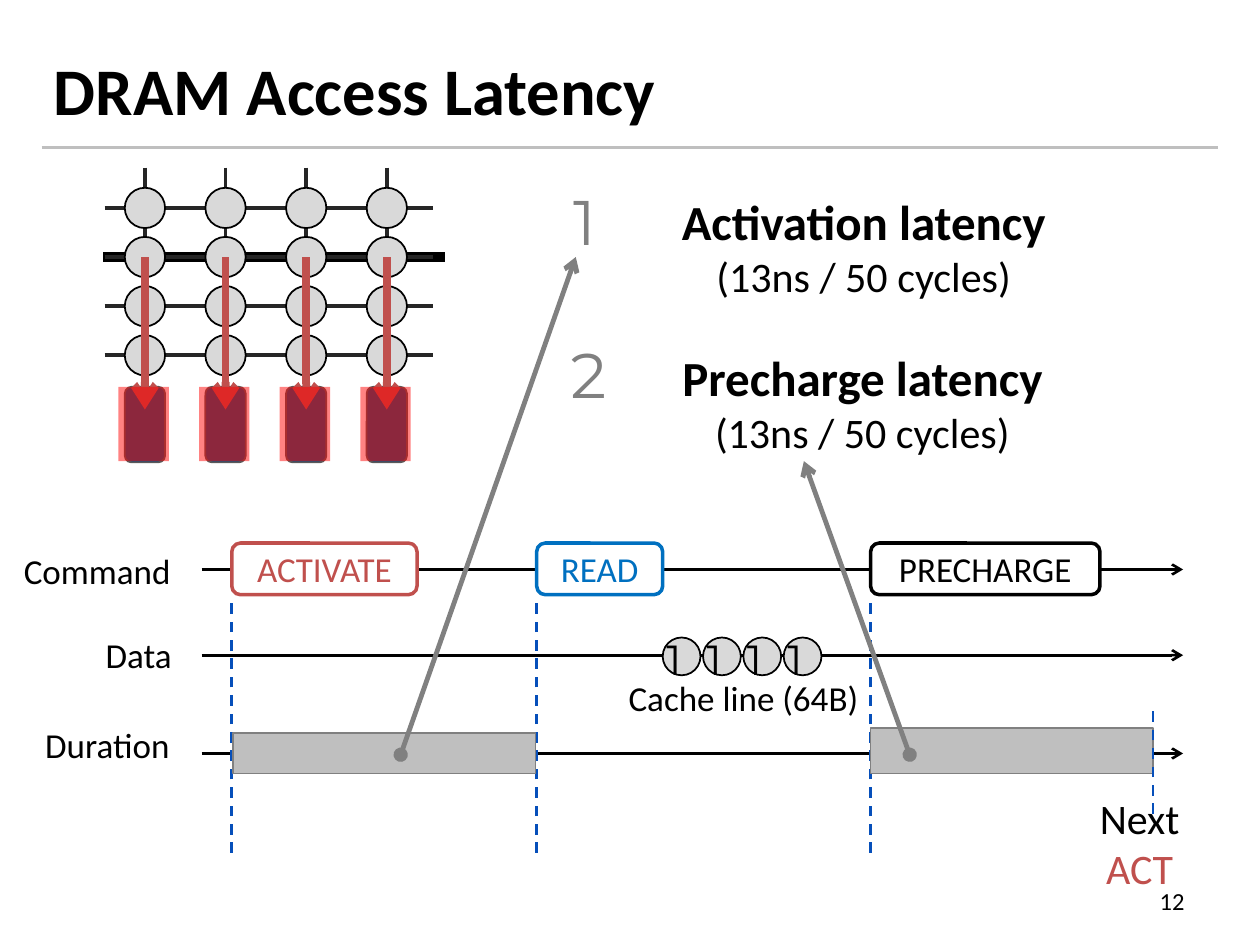
from dataclasses import dataclass
from typing import Optional

from lxml.etree import SubElement
from pptx import Presentation
from pptx.dml.color import RGBColor
from pptx.enum.dml import MSO_LINE
from pptx.enum.shapes import MSO_CONNECTOR, MSO_SHAPE
from pptx.enum.text import MSO_ANCHOR, MSO_AUTO_SIZE, PP_ALIGN
from pptx.oxml.ns import qn
from pptx.util import Inches, Pt

BLACK = RGBColor(0x00, 0x00, 0x00)
WHITE = RGBColor(0xFF, 0xFF, 0xFF)
CHARCOAL = RGBColor(0x26, 0x26, 0x26)
DARK_GRAY = RGBColor(0x59, 0x59, 0x59)
GRAY = RGBColor(0x80, 0x80, 0x80)
SILVER = RGBColor(0xBF, 0xBF, 0xBF)
CELL_GRAY = RGBColor(0xD9, 0xD9, 0xD9)
NAVY = RGBColor(0x1F, 0x4E, 0x79)
BRICK = RGBColor(0xC0, 0x50, 0x4D)
RED = RGBColor(0xFF, 0x00, 0x00)
BLUE = RGBColor(0x00, 0x70, 0xC0)
DASH_BLUE = RGBColor(0x06, 0x4F, 0xBA)

COLUMNS = [1.15 + 0.64 * i for i in range(4)]
ROWS = [1.65 + 0.39 * i for i in range(4)]
CELL_SIZE = 0.32
ACTIVE_ROW = ROWS[1]


@dataclass
class Run:
    text: str
    size: float
    color: RGBColor = BLACK
    bold: bool = False
    font: str = "Calibri"


@dataclass
class Command:
    name: str
    left: float
    width: float
    color: RGBColor


@dataclass
class Track:
    label: str
    left: float
    top: float
    width: float
    axis: float


@dataclass
class Latency:
    number: str
    number_at: tuple[float, float]
    title: str
    text_at: tuple[float, float]
    arrow_start: tuple[float, float]
    arrow_end: tuple[float, float]


COMMANDS = [
    Command("ACTIVATE", 1.84, 1.47, BRICK),
    Command("READ", 4.26, 1, BLUE),
    Command("PRECHARGE", 6.91, 1.82, BLACK),
]
TRACKS = [
    Track("Command", 0.09, 4.31, 1.39, 4.52),
    Track("Data", 0.74, 4.98, 0.74, 5.2),
    Track("Duration", 0.26, 5.69, 1.23, 5.98),
]
LATENCIES = [
    Latency("1", (4.45, 1.4), "Activation latency", (5.09, 1.47), (3.18, 5.99), (4.57, 2.04)),
    Latency("2", (4.43, 2.61), "Precharge latency", (5.08, 2.71), (7.22, 5.99), (6.38, 3.66)),
]


def add_line(shapes, start: tuple[float, float], end: tuple[float, float], color: RGBColor,
             width: float, head: str = "", tail: str = "", dashed: bool = False) -> None:
    """Draw a straight line; head sits at its start and tail at its end."""
    connector = shapes.add_connector(MSO_CONNECTOR.STRAIGHT, *map(Inches, start + end))
    connector.line.color.rgb = color
    connector.line.width = Pt(width)
    if dashed:
        connector.line.dash_style = MSO_LINE.DASH
    outline = connector.line._get_or_add_ln()
    for tag, kind in (("a:headEnd", head), ("a:tailEnd", tail)):
        if kind:
            SubElement(outline, qn(tag), type=kind)
    SubElement(connector._element.spPr, qn("a:effectLst"))


def add_box(shapes, kind: MSO_SHAPE, left: float, top: float, width: float, height: float,
            fill: RGBColor, line: Optional[RGBColor] = None, line_width: float = 1,
            opacity: int = 100):
    shape = shapes.add_shape(kind, *map(Inches, (left, top, width, height)))
    shape.shadow.inherit = False
    shape.fill.solid()
    shape.fill.fore_color.rgb = fill
    if opacity < 100:
        color = shape._element.spPr.find(qn("a:solidFill"))[0]
        SubElement(color, qn("a:alpha"), val=str(opacity * 1000))
    if line is None:
        shape.line.fill.background()
    else:
        shape.line.color.rgb = line
        shape.line.width = Pt(line_width)
    return shape


def style(font, run: Run) -> None:
    font.name = run.font
    font.size = Pt(run.size)
    font.bold = run.bold
    font.color.rgb = run.color


def add_text(shapes, left: float, top: float, width: float, height: float, *lines: Run,
             align: PP_ALIGN = PP_ALIGN.LEFT, anchor: MSO_ANCHOR = MSO_ANCHOR.TOP,
             wrap: bool = False) -> None:
    """Add a text box with one paragraph per line."""
    frame = shapes.add_textbox(*map(Inches, (left, top, width, height))).text_frame
    frame.word_wrap = wrap
    frame.auto_size = MSO_AUTO_SIZE.NONE if wrap else MSO_AUTO_SIZE.SHAPE_TO_FIT_TEXT
    frame.vertical_anchor = anchor
    for index, line in enumerate(lines):
        paragraph = frame.add_paragraph() if index else frame.paragraphs[0]
        paragraph.alignment = align
        paragraph.text = line.text
        style(paragraph.font, line)


def draw_memory_array(shapes) -> None:
    add_line(shapes, (0.82, ACTIVE_ROW), (3.53, ACTIVE_ROW), BLACK, 6)
    for y in ROWS:
        add_line(shapes, (0.83, y), (3.44, y), CHARCOAL, 2.25)
    half = CELL_SIZE / 2
    for x in COLUMNS:
        add_box(shapes, MSO_SHAPE.ROUNDED_RECTANGLE, x - half, 3.07, CELL_SIZE, 0.6, NAVY, DARK_GRAY)
        add_line(shapes, (x, 1.33), (x, 3.07), CHARCOAL, 2.25)
        for y in ROWS:
            add_box(shapes, MSO_SHAPE.OVAL, x - half, y - half, CELL_SIZE, CELL_SIZE, CELL_GRAY, BLACK)
    for x in COLUMNS:
        add_line(shapes, (x, ACTIVE_ROW), (x, 3.25), BRICK, 4.5, tail="arrow")
    for x in COLUMNS:
        add_box(shapes, MSO_SHAPE.RECTANGLE, x - 0.21, 3.07, 0.4, 0.59, RED, opacity=49)


def draw_timeline(shapes) -> None:
    for track in TRACKS:
        add_line(shapes, (1.6, track.axis), (9.39, track.axis), BLACK, 1.5, tail="arrow")
        add_text(shapes, track.left, track.top, track.width, 0.44, Run(track.label, 20))
    for command in COMMANDS:
        box = add_box(shapes, MSO_SHAPE.ROUNDED_RECTANGLE, command.left, 4.31, command.width, 0.41,
                      WHITE, command.color, 2)
        box.text_frame.vertical_anchor = MSO_ANCHOR.MIDDLE
        paragraph = box.text_frame.paragraphs[0]
        paragraph.alignment = PP_ALIGN.CENTER
        paragraph.text = command.name
        style(paragraph.font, Run(command.name, 20, command.color))
    for command in COMMANDS:
        add_line(shapes, (command.left, 6.77), (command.left, 4.75), DASH_BLUE, 1.5, dashed=True)
    add_box(shapes, MSO_SHAPE.RECTANGLE, 1.85, 5.82, 2.4, 0.32, SILVER, GRAY)
    add_box(shapes, MSO_SHAPE.RECTANGLE, 6.91, 5.78, 2.24, 0.36, SILVER, GRAY)
    for index in range(4):
        left = 5.26 + 0.32 * index
        add_box(shapes, MSO_SHAPE.OVAL, left, 5.06, 0.3, 0.3, CELL_GRAY, BLACK)
        add_text(shapes, left - 0.07, 4.98, 0.43, 0.5, Run("1", 24, font="Montserrat"))
    add_text(shapes, 4.89, 5.32, 2.09, 0.44, Run("Cache line (64B)", 20))
    add_line(shapes, (9.15, 6.46), (9.15, 5.64), DASH_BLUE, 1.5, dashed=True)
    add_text(shapes, 8.59, 6.24, 0.91, 0.91, Run("Next", 24), Run("ACT", 24, BRICK),
             align=PP_ALIGN.CENTER)


def draw_latency(shapes, latency: Latency) -> None:
    add_line(shapes, latency.arrow_start, latency.arrow_end, GRAY, 2.75, "oval", "arrow")
    add_text(shapes, *latency.text_at, 3.53, 0.98, Run(latency.title, 28, bold=True),
             Run("(13ns / 50 cycles)", 24), align=PP_ALIGN.CENTER)
    add_text(shapes, *latency.number_at, 0.54, 0.71, Run(latency.number, 36, GRAY, font="Montserrat"))


def main() -> None:
    presentation = Presentation()
    presentation.slide_width, presentation.slide_height = Inches(10), Inches(7.5)
    shapes = presentation.slides.add_slide(presentation.slide_layouts[6]).shapes
    add_line(shapes, (0.33, 1.17), (9.67, 1.17), SILVER, 1.5)
    add_text(shapes, 0.33, 0.08, 9.33, 1.25, Run("DRAM Access Latency", 38, bold=True),
             anchor=MSO_ANCHOR.MIDDLE, wrap=True)
    add_text(shapes, 7.17, 6.95, 2.33, 0.4, Run("12", 14), align=PP_ALIGN.RIGHT,
             anchor=MSO_ANCHOR.MIDDLE, wrap=True)
    draw_memory_array(shapes)
    draw_timeline(shapes)
    for latency in LATENCIES:
        draw_latency(shapes, latency)
    presentation.save("out.pptx")


if __name__ == "__main__":
    main()
